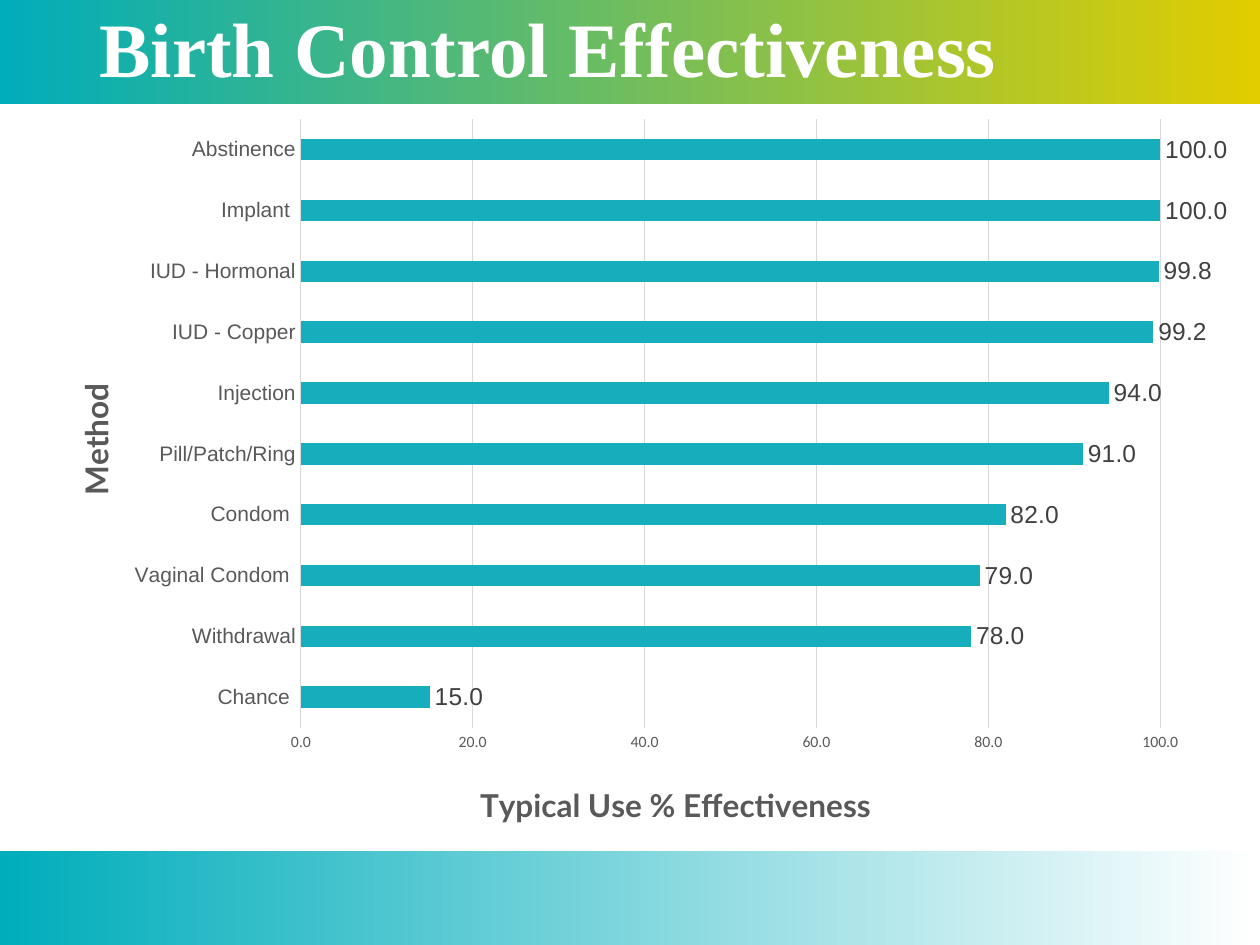
from lxml import etree
from pptx import Presentation
from pptx import util as u
from pptx.chart.data import CategoryChartData
from pptx.dml.color import RGBColor
from pptx.enum import chart as ch, shapes, text
from pptx.oxml import parse_xml
from pptx.oxml.ns import nsdecls, qn

# Content
HEAD = "Birth Control Effectiveness"
AXES = {"cat": "Method", "val": "Typical Use % Effectiveness"}
DATA = [
    ("Chance ", 15), ("Withdrawal", 78), ("Vaginal Condom ", 79),
    ("Condom ", 82), ("Pill/Patch/Ring", 91), ("Injection", 94),
    ("IUD - Copper", 99.2), ("IUD - Hormonal", 99.8),
    ("Implant ", 100), ("Abstinence", 100),
]
HEX = {"teal": "00ADBB", "gold": "E1CD00", "white": "FFFFFF", "bar": "16ADBC",
       "grid": "D9D9D9", "grey": "595959", "dark": "404040", "black": "000000"}
WIDE, HIGH = 10, 7.5
TOP, FOOT = 0.83, 0.75
BANDS = [(0, TOP, "gold"), (HIGH - FOOT, FOOT, "white")]
# Shares of the chart's size
PLOT = {"x": 0.225, "y": 0.02, "w": 0.754, "h": 0.824}
SPOTS = {"cat": {"x": 0.03, "y": 0.37}, "val": {"x": 0.37, "y": 0.91}}


def hue(key):
    return RGBColor.from_string(HEX[key])


def put(obj, vals):
    for key, val in vals.items():
        setattr(obj, key, val)


def style(font, size, name, key, bold=False):
    put(font, {"size": u.Pt(size), "name": name, "bold": bold})
    font.color.rgb = hue(key)


def rule(line):
    line.color.rgb = hue("grid")
    line.width = u.Pt(0.75)


def place(node, spot, at, inner=False):
    """Give a chart part a fixed layout, as child number at."""
    for old in node.findall(qn("c:layout")):
        node.remove(old)
    lay = parse_xml(f"<c:layout {nsdecls('c')}><c:manualLayout/></c:layout>")
    rows = [("layoutTarget", "inner")] if inner else []
    rows += [(k + "Mode", "edge") for k in "xy"] + list(spot.items())
    for tag, val in rows:
        etree.SubElement(lay[0], qn("c:" + tag)).set("val", str(val))
    node.insert(at, lay)


prs = Presentation()
put(prs, {"slide_width": u.Inches(WIDE), "slide_height": u.Inches(HIGH)})
slide = prs.slides.add_slide(prs.slide_layouts[5])

# Gradient bands
for top, high, end in BANDS:
    band = slide.shapes.add_shape(shapes.MSO_SHAPE.RECTANGLE, 0, u.Inches(top),
                                  prs.slide_width, u.Inches(high))
    band.shadow.inherit = False
    band.line.fill.background()
    band.fill.gradient()
    band.fill.gradient_angle = 0
    for stop, key in zip(band.fill.gradient_stops, ("teal", end)):
        stop.color.rgb = hue(key)

# Title, in front of the bands
title = slide.shapes.title
put(title, {"left": u.Inches(0.69), "top": 0,
            "width": u.Inches(8.62), "height": u.Inches(TOP)})
put(title.text_frame, {"text": HEAD, "word_wrap": True,
                       "vertical_anchor": text.MSO_ANCHOR.MIDDLE})
para = title.text_frame.paragraphs[0]
put(para, {"alignment": text.PP_ALIGN.LEFT, "line_spacing": 0.9})
style(para.runs[0].font, 44, "Times New Roman", "white", True)
slide.shapes._spTree.append(title.element)

# Bar chart
data = CategoryChartData(number_format="0.0")
data.categories = [name for name, _ in DATA]
data.add_series("Series 1", [val for _, val in DATA])
chart = slide.shapes.add_chart(
    ch.XL_CHART_TYPE.BAR_CLUSTERED, u.Inches(0.25), u.Inches(TOP),
    u.Inches(9.5), u.Inches(5.86), data).chart
put(chart, {"has_legend": False, "has_title": False})
style(chart.font, 10, "Calibri", "black")
chart.element.find(qn("c:chart")).addnext(parse_xml(
    f'<c:spPr {nsdecls("c", "a")}><a:solidFill><a:srgbClr val="{HEX["white"]}"/>'
    "</a:solidFill><a:ln><a:noFill/></a:ln></c:spPr>"))

plot = chart.plots[0]
put(plot, {"gap_width": 182, "vary_by_categories": False,
           "has_data_labels": True})
put(plot.data_labels, {"show_value": True, "number_format": "0.0",
                       "number_format_is_linked": False,
                       "position": ch.XL_LABEL_POSITION.OUTSIDE_END})
style(plot.data_labels.font, 14, "Arial", "dark")
fill = plot.series[0].format.fill
fill.solid()
fill.fore_color.rgb = hue("bar")

# Axes
cat, val = chart.category_axis, chart.value_axis
for key, axis, size, face in (("cat", cat, 12, "Arial"), ("val", val, 9, "Calibri")):
    put(axis, {"major_tick_mark": ch.XL_TICK_MARK.NONE,
               "minor_tick_mark": ch.XL_TICK_MARK.NONE,
               "has_major_gridlines": axis is val})
    style(axis.tick_labels.font, size, face, "grey")
    frame = axis.axis_title.text_frame
    frame.text = AXES[key]
    style(frame.paragraphs[0].runs[0].font, 18, "Lato", "grey", True)
    place(axis.axis_title._element, SPOTS[key], 1)
put(val, {"minimum_scale": 0, "maximum_scale": 105, "major_unit": 20})
put(val.tick_labels, {"number_format": "0.0", "number_format_is_linked": False})
rule(cat.format.line)
rule(val.major_gridlines.format.line)
val.format.line.fill.background()
place(chart.element.find(".//" + qn("c:plotArea")), PLOT, 0, True)

prs.save("out.pptx")
